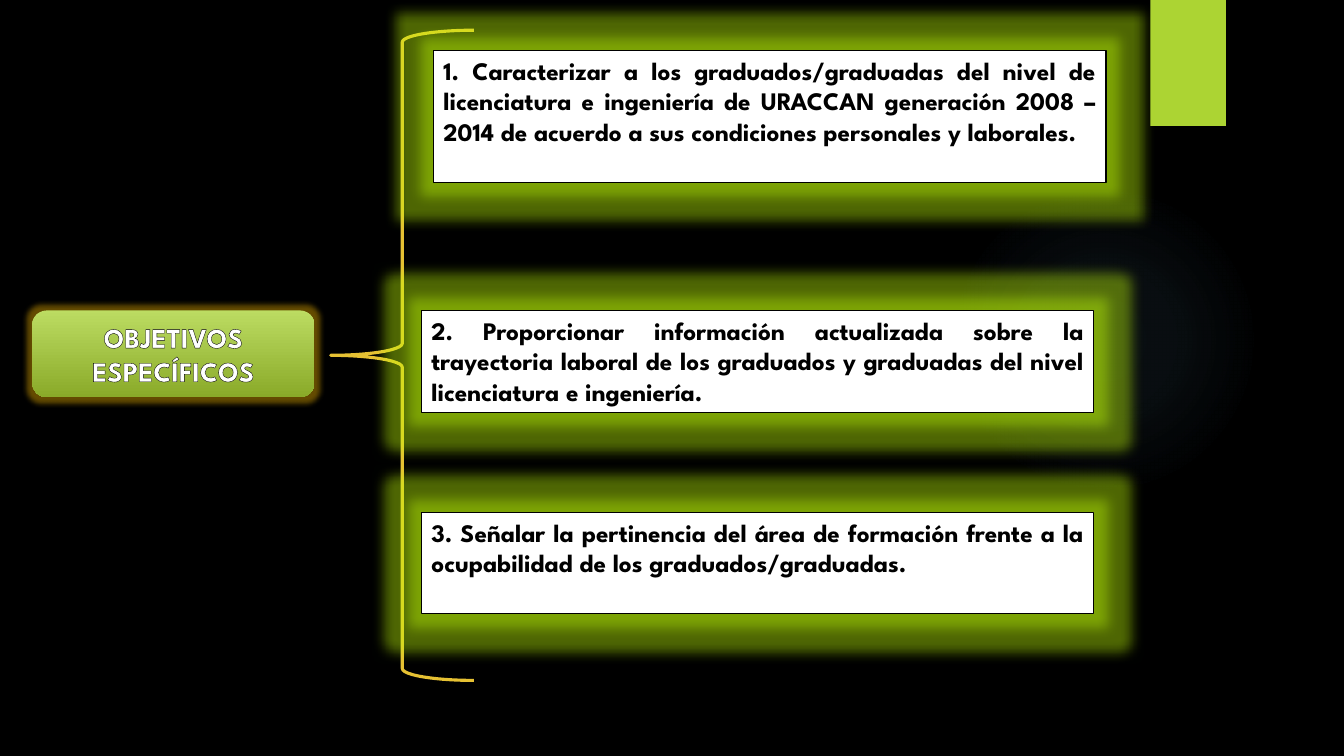
from lxml import etree
from pptx import Presentation
from pptx.dml.color import RGBColor
from pptx.enum.shapes import MSO_SHAPE
from pptx.enum.text import MSO_ANCHOR, MSO_AUTO_SIZE, PP_ALIGN
from pptx.oxml import parse_xml
from pptx.oxml.ns import qn
from pptx.util import Inches, Pt

RECTANGLE, ROUNDED = MSO_SHAPE.RECTANGLE, MSO_SHAPE.ROUNDED_RECTANGLE
OVAL, BRACE = MSO_SHAPE.OVAL, MSO_SHAPE.LEFT_BRACE
CENTER, JUSTIFY = PP_ALIGN.CENTER, PP_ALIGN.JUSTIFY
TOP, MIDDLE = MSO_ANCHOR.TOP, MSO_ANCHOR.MIDDLE
GROW, FIXED = MSO_AUTO_SIZE.SHAPE_TO_FIT_TEXT, MSO_AUTO_SIZE.NONE

TITLE = "OBJETIVOS ESPECÍFICOS"
# text, left, top, height in inches
OBJECTIVES = [
    ("1. Caracterizar a los graduados/graduadas del nivel de licenciatura e "
     "ingeniería de URACCAN generación 2008 – 2014 de acuerdo a sus "
     "condiciones personales y laborales.", 4.3, 0.5, 1.31),
    ("2. Proporcionar información actualizada sobre la trayectoria laboral de "
     "los graduados y graduadas del nivel licenciatura e ingeniería.",
     4.18, 3.08, 1.01),
    ("3. Señalar la pertinencia del área de formación frente a la "
     "ocupabilidad de los graduados/graduadas.", 4.18, 5.08, 1.01),
]
OBJECTIVE_WIDTH = 6.67
FONT = "League Spartan"
COLORS = {
    "black": "000000", "white": "FFFFFF", "lime": "ACD433", "gold": "E6C133",
    "halo": "7AC4F0", "button_top": "BCDC62", "button_bottom": "8AAA29",
    "lime_glow": "C3FF08", "gold_glow": "FFBF00",
}
NAMESPACE = 'xmlns:a="http://schemas.openxmlformats.org/drawingml/2006/main"'


def rgb(name):
    return RGBColor.from_string(COLORS[name])


def color_xml(name, opacity=100):
    return (f'<a:srgbClr val="{COLORS[name]}">'
            f'<a:alpha val="{opacity * 1000}"/></a:srgbClr>')


def add_shape(slide, kind, left, top, width, height, fill=None, line=None,
              line_width=0.75):
    shape = slide.shapes.add_shape(kind, Inches(left), Inches(top),
                                   Inches(width), Inches(height))
    shape.shadow.inherit = False
    if fill:
        shape.fill.solid()
        shape.fill.fore_color.rgb = rgb(fill)
    else:
        shape.fill.background()
    if line:
        shape.line.color.rgb = rgb(line)
        shape.line.width = Pt(line_width)
    else:
        shape.line.fill.background()
    return shape


def set_gradient(shape, stops, direction):
    """Fill with (position, colour, opacity) stops along a direction element."""
    stops_xml = "".join(f'<a:gs pos="{position * 1000}">'
                        f'{color_xml(color, opacity)}</a:gs>'
                        for position, color, opacity in stops)
    properties = shape.element.spPr
    properties.replace(properties.find(qn("a:noFill")), parse_xml(
        f'<a:gradFill {NAMESPACE} rotWithShape="1">'
        f'<a:gsLst>{stops_xml}</a:gsLst>{direction}</a:gradFill>'))


def set_effects(shape, glow=None, shadow=None):
    """glow is (colour, radius, opacity); shadow is (opacity, blur, distance)."""
    effects = ""
    if glow:
        color, radius, opacity = glow
        effects += f'<a:glow rad="{Pt(radius)}">{color_xml(color, opacity)}</a:glow>'
    if shadow:
        opacity, blur, distance = shadow
        effects += (f'<a:outerShdw blurRad="{Pt(blur)}" dist="{Pt(distance)}" '
                    f'dir="5400000" rotWithShape="0">'
                    f'{color_xml("black", opacity)}</a:outerShdw>')
    properties = shape.element.spPr
    properties.replace(properties.find(qn("a:effectLst")), parse_xml(
        f'<a:effectLst {NAMESPACE}>{effects}</a:effectLst>'))


def write_text(shape, text, size=18, color="black", align=JUSTIFY, anchor=TOP,
               auto_size=GROW, outline=None):
    frame = shape.text_frame
    frame.word_wrap = True
    frame.auto_size = auto_size
    frame.vertical_anchor = anchor
    paragraph = frame.paragraphs[0]
    paragraph.alignment = align
    run = paragraph.add_run()
    run.text = text
    run.font.name = FONT
    run.font.size = Pt(size)
    run.font.bold = True
    run.font.color.rgb = rgb(color)
    if outline:
        line = etree.Element(qn("a:ln"), w=str(Pt(0.75)))
        fill = etree.SubElement(line, qn("a:solidFill"))
        etree.SubElement(fill, qn("a:srgbClr"), val=COLORS[outline])
        run.font.fill  # the outline goes ahead of the text fill
        run._r.get_or_add_rPr().insert(0, line)


def build_slide(presentation):
    slide = presentation.slides.add_slide(presentation.slide_layouts[6])
    slide.background.fill.solid()
    slide.background.fill.fore_color.rgb = rgb("black")

    halo = add_shape(slide, OVAL, 9.41, 1.83, 3.08, 3.08)
    set_gradient(halo, [(0, "halo", 7), (36, "halo", 6), (69, "halo", 0)],
                 '<a:path path="circle"><a:fillToRect l="50000" t="50000" '
                 'r="50000" b="50000"/></a:path>')

    soft_shadow = (45, 3, 2)
    tab = add_shape(slide, RECTANGLE, 11.41, 0, 0.75, 1.25, fill="lime")
    set_effects(tab, shadow=soft_shadow)

    button = add_shape(slide, ROUNDED, 0.32, 3.08, 2.8, 0.86)
    set_gradient(button, [(0, "button_top", 100), (100, "button_bottom", 100)],
                 '<a:lin ang="5400000" scaled="0"/>')
    set_effects(button, glow=("gold_glow", 8, 40), shadow=(100, 8.5, 1))
    write_text(button, TITLE, size=20, color="white", align=CENTER,
               anchor=MIDDLE, auto_size=FIXED, outline="black")

    brace = add_shape(slide, BRACE, 3.28, 0.3, 1.42, 6.45, line="gold",
                      line_width=2.25)
    set_effects(brace, shadow=soft_shadow)

    for text, left, top, height in OBJECTIVES:
        box = add_shape(slide, RECTANGLE, left, top, OBJECTIVE_WIDTH, height,
                        fill="white", line="black")
        set_effects(box, glow=("lime_glow", 18, 40))
        write_text(box, text)


def main():
    presentation = Presentation()
    presentation.slide_width = Inches(13.33)
    presentation.slide_height = Inches(7.5)
    build_slide(presentation)
    presentation.save("out.pptx")


if __name__ == "__main__":
    main()
